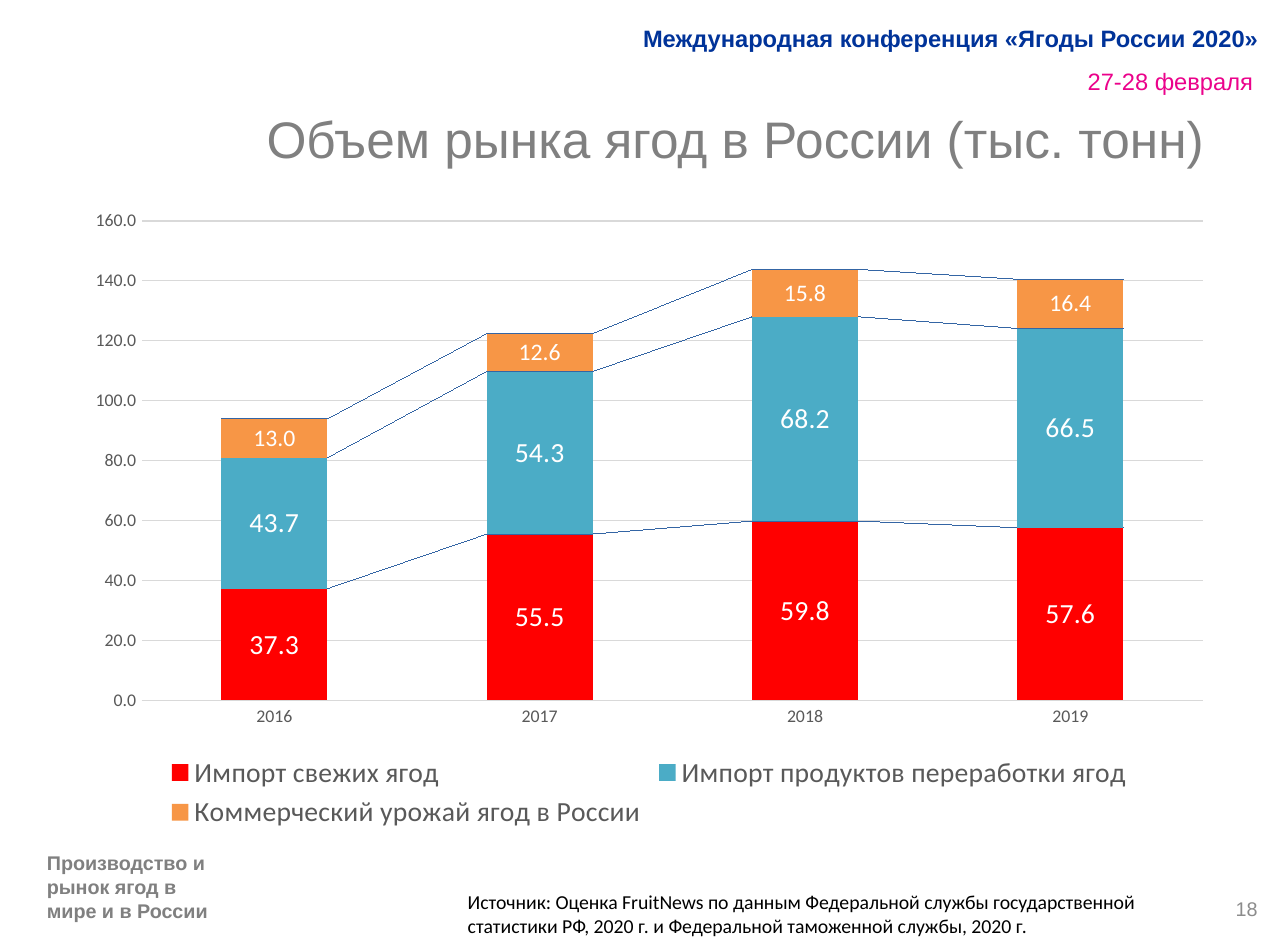
from pptx import Presentation, util as u
from pptx.chart.data import CategoryChartData
from pptx.dml.color import RGBColor
from pptx.enum import chart as ch, text as tx
from pptx.oxml import parse_xml
from pptx.oxml.ns import nsdecls, qn

LEFT, MID, RIGHT = tx.PP_ALIGN.LEFT, tx.PP_ALIGN.CENTER, tx.PP_ALIGN.RIGHT
GREY, DARK, RULE = "808080", "595959", "D9D9D9"


def rgb(code):
    return RGBColor.from_string(code)


class Page:
    """Holds the style and the slide; boxes are in percent of the slide's size."""

    def __init__(self, deck, font="Arial", body="Calibri"):
        self.deck, self.font, self.body = deck, font, body
        self.slide = deck.slides.add_slide(deck.slide_layouts[6])

    def place(self, box):
        sides = (self.deck.slide_width, self.deck.slide_height) * 2
        return [round(part * side / 100) for part, side in zip(box, sides)]

    def style(self, font, size, color, name=None, bold=False):
        font.name, font.size, font.bold = name or self.body, u.Pt(size), bold
        font.color.rgb = rgb(color)

    def text(self, words, box, size, color, align=LEFT, name=None,
             bold=False, mid=False, pad=(0.08, 0.04), lead=None):
        frame = self.slide.shapes.add_textbox(*self.place(box)).text_frame
        frame.word_wrap = True
        frame.margin_left = frame.margin_right = u.Inches(pad[0])
        frame.margin_top = frame.margin_bottom = u.Inches(pad[1])
        frame.vertical_anchor = tx.MSO_ANCHOR.MIDDLE if mid else tx.MSO_ANCHOR.TOP
        frame.text = words
        para = frame.paragraphs[0]
        para.alignment = align
        if lead:
            para.line_spacing = u.Pt(lead)
        self.style(para.runs[0].font, size, color, name or self.font, bold)

    def stack(self, years, rows, box):
        """Stacked columns; each row is name, values, colour, label size."""
        data = CategoryChartData(number_format="0.0")
        data.categories = years
        for name, vals, _, _ in rows:
            data.add_series(name, vals)
        kind = ch.XL_CHART_TYPE.COLUMN_STACKED
        chart = self.slide.shapes.add_chart(kind, *self.place(box), data).chart
        self.style(chart.font, 10, "000000")
        chart.has_title = False
        chart.has_legend = True
        chart.legend.position = ch.XL_LEGEND_POSITION.BOTTOM
        chart.legend.include_in_layout = False
        self.style(chart.legend.font, 14, DARK)

        plot = chart.plots[0]
        plot.gap_width, plot.overlap = 150, 100
        plot.vary_by_categories = False
        for bars, (_, _, color, size) in zip(plot.series, rows):
            bars.format.fill.solid()
            bars.format.fill.fore_color.rgb = rgb(color)
            tags = bars.data_labels
            tags.show_value = True
            tags.position = ch.XL_LABEL_POSITION.CENTER
            tags.number_format, tags.number_format_is_linked = "0.0", False
            self.style(tags.font, size, "FFFFFF")
        self.link(chart)
        self.axes(chart)

    def link(self, chart):
        """Join the tops of neighbouring bars with series lines."""
        lines = parse_xml(
            f'<c:serLines {nsdecls("c", "a")}><c:spPr><a:ln w="9525"><a:solidFill>'
            '<a:srgbClr val="3465A4"/></a:solidFill></a:ln></c:spPr></c:serLines>')
        group = next(chart.element.iter(qn("c:barChart")))
        group.find(qn("c:axId")).addprevious(lines)

    def axes(self, chart):
        cat, val = chart.category_axis, chart.value_axis
        for axis in (cat, val):
            axis.major_tick_mark = axis.minor_tick_mark = ch.XL_TICK_MARK.NONE
            self.style(axis.tick_labels.font, 9, DARK)
        val.minimum_scale, val.maximum_scale, val.major_unit = 0, 160, 20
        val.tick_labels.number_format = "0.0"
        val.tick_labels.number_format_is_linked = False
        val.format.line.fill.background()
        val.has_major_gridlines = True
        for line in (cat.format.line, val.major_gridlines.format.line):
            line.color.rgb, line.width = rgb(RULE), u.Pt(0.75)


def main():
    deck = Presentation()
    deck.slide_width, deck.slide_height = u.Cm(23), u.Cm(17)
    page = Page(deck)
    page.text("27-28 февраля", (80.4, 5.23, 17.78, 5.53), 12, "EB028B",
              RIGHT, lead=20.4)
    page.text("Международная конференция «Ягоды России 2020»",
              (46.71, 1.05, 51.91, 5.83), 12, "003399", RIGHT, bold=True, mid=True)
    page.text("Объем рынка ягод в России (тыс. тонн)",
              (16.12, 10.66, 82.05, 11.66), 26, GREY, MID)
    page.text("18", (75.21, 92.7, 23.3, 5.38), 10, "8C8C8C", RIGHT, mid=True)
    page.stack(("2016", "2017", "2018", "2019"), (
        ("Импорт свежих ягод", (37.3, 55.5, 59.8, 57.6), "FF0000", 14),
        ("Импорт продуктов переработки ягод", (43.7, 54.3, 68.2, 66.5), "4BACC6", 14),
        ("Коммерческий урожай ягод в России", (13, 12.6, 15.8, 16.4), "F79646", 12),
    ), (5.63, 20.77, 89.56, 66.94))
    page.text("Источник: Оценка FruitNews по данным Федеральной службы "
              "государственной статистики РФ, 2020 г. и Федеральной "
              "таможенной службы, 2020 г.",
              (35.23, 92.7, 56.54, 6.58), 10, "000000", name=page.body,
              pad=(0.1, 0.05))
    page.text("Производство и рынок ягод в мире и в России",
              (2.76, 87.74, 15.9, 10.76), 10, GREY, bold=True, mid=True)
    deck.save("out.pptx")


if __name__ == "__main__":
    main()
